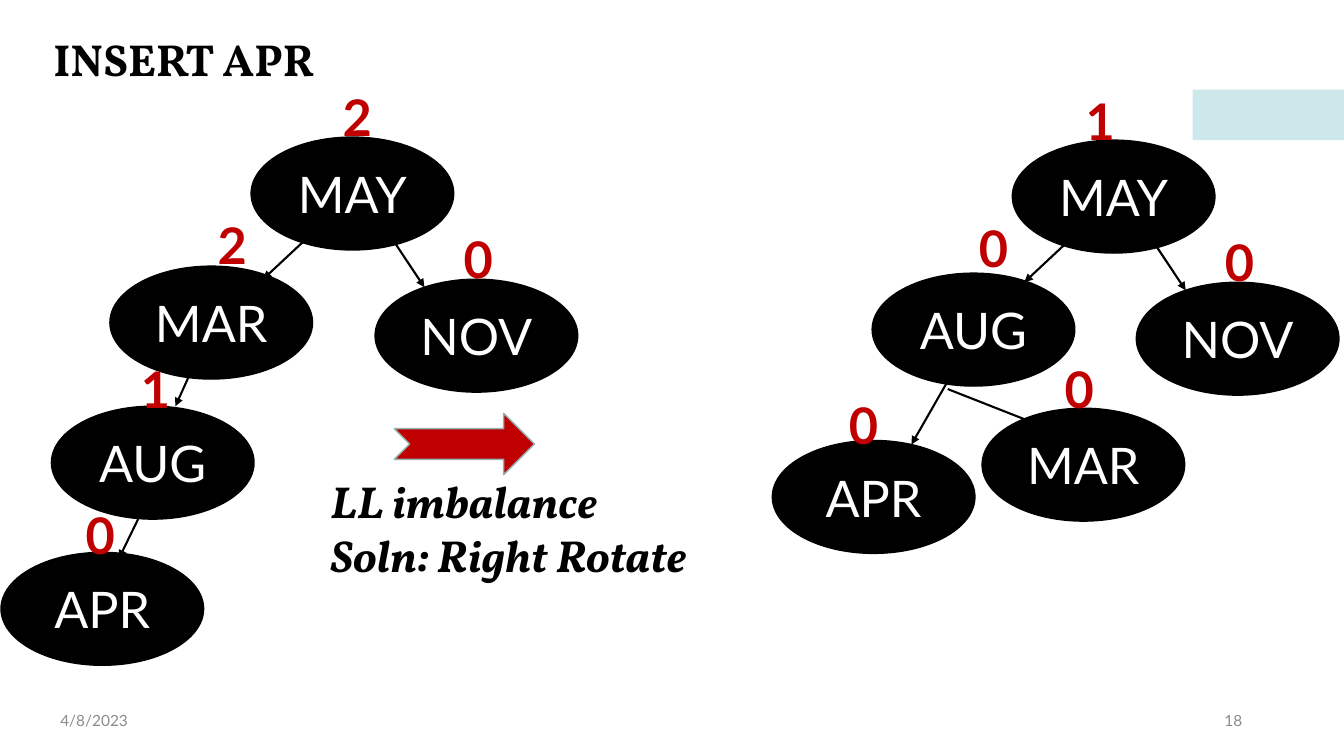
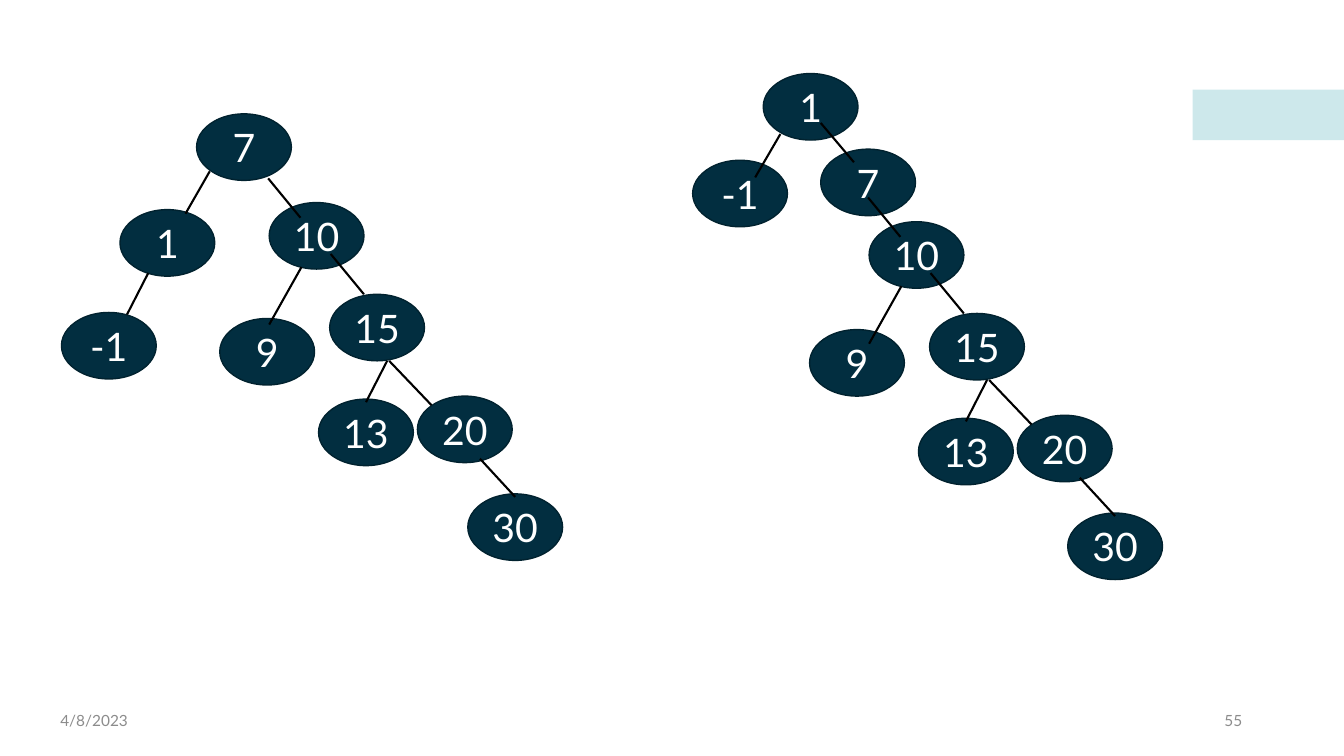
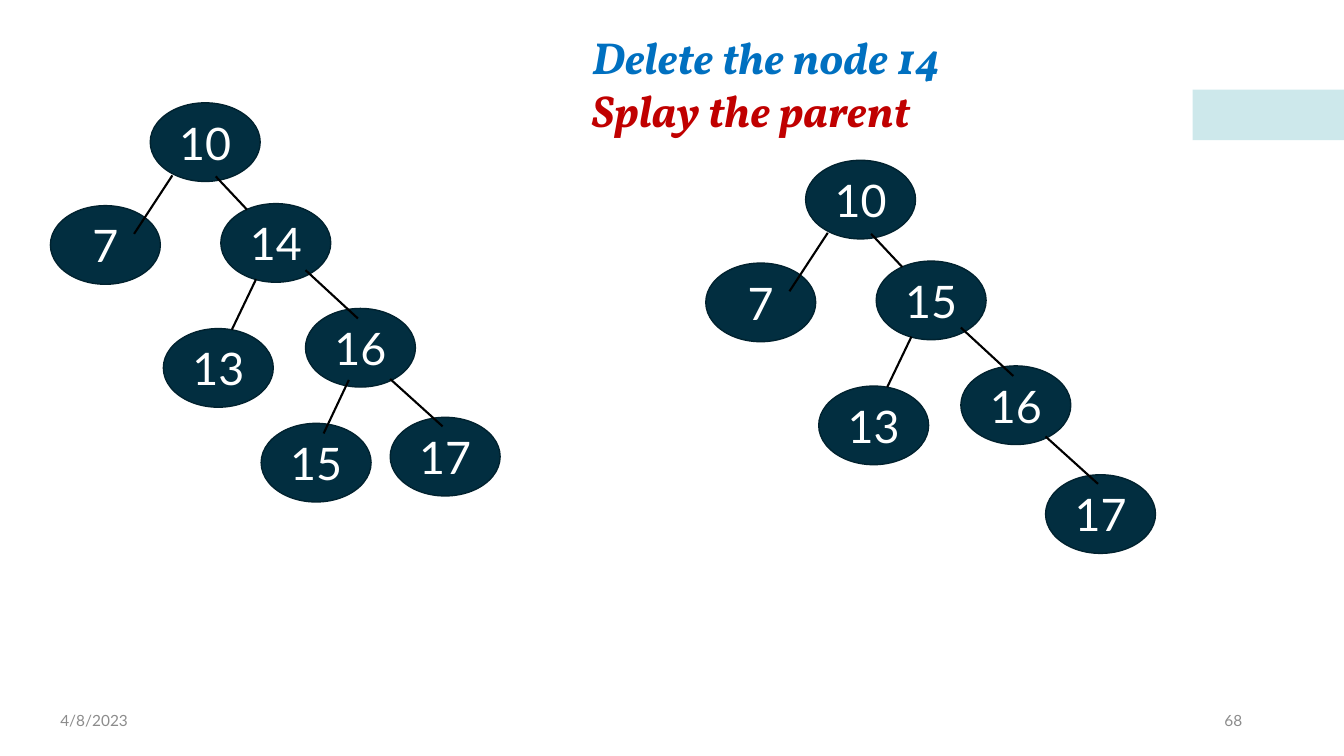
from lxml import etree
from pptx import Presentation
from pptx import util as u
from pptx.dml.color import RGBColor
from pptx.enum import shapes, text
from pptx.oxml.ns import qn

BLACK = RGBColor(0x00, 0x00, 0x00)
WHITE = RGBColor(0xFF, 0xFF, 0xFF)
GREY = RGBColor(0x8C, 0x8C, 0x8C)
RED = RGBColor(0xC0, 0x00, 0x00)
BLUE = RGBColor(0x00, 0x70, 0xC0)
NAVY = RGBColor(0x02, 0x2E, 0x40)
NAVY_EDGE = RGBColor(0x01, 0x22, 0x2F)
AQUA = RGBColor(0x9C, 0xD3, 0xD9)
ARROW_EDGE = RGBColor(0x91, 0xB0, 0xB3)

SANS, SERIF = "Lato", "Vollkorn"
COLUMNS, ROWS = 13.33, 7.5  # grid of one-inch cells
TITLE_ONLY, BLANK = 5, 6
LEFT, CENTER, RIGHT = text.PP_ALIGN.LEFT, text.PP_ALIGN.CENTER, text.PP_ALIGN.RIGHT
TOP, MIDDLE = text.MSO_ANCHOR.TOP, text.MSO_ANCHOR.MIDDLE


def grid(*cells):
    """Turn columns and rows into lengths."""
    return [u.Inches(cell) for cell in cells]


def shift_nodes(nodes, right, down):
    return [(label, left + right, top + down) for label, left, top in nodes]


def shift_edges(edges, right, down):
    return [(a + right, b + down, c + right, d + down) for a, b, c, d in edges]


class Deck:
    def __init__(self):
        self.presentation = Presentation()
        self.presentation.slide_width, self.presentation.slide_height = grid(COLUMNS, ROWS)
        self.slide = None

    def add_slide(self, number, layout=BLANK):
        first = self.slide is None
        self.slide = self.presentation.slides.add_slide(
            self.presentation.slide_layouts[layout])
        if first:
            self.add_master_band()
        for words, left, align in (("4/8/2023", 0.5, LEFT), (str(number), 9.42, RIGHT)):
            self.add_text([words], (left, 6.95, 3, 0.4), 11, [GREY], SANS,
                          align=align, anchor=MIDDLE)

    def add_master_band(self):
        band = self.add_figure(shapes.MSO_SHAPE.RECTANGLE, (11.83, 0.89, 1.5, 0.5), AQUA)
        color = band.element.spPr.find(qn("a:solidFill"))[0]
        etree.SubElement(color, qn("a:alpha")).set("val", "50000")
        self.presentation.slide_master.shapes.element.append(band.element)

    def add_figure(self, preset, box, fill, line=None):
        shape = self.slide.shapes.add_shape(preset, *grid(*box))
        shape.shadow.inherit = False
        shape.fill.solid()
        shape.fill.fore_color.rgb = fill
        if line is None:
            shape.line.fill.background()
        else:
            shape.line.color.rgb = line
            shape.line.width = u.Pt(1)
        return shape

    def set_text(self, shape, lines, size, colors, font, bold=False, italic=False,
                 align=LEFT, anchor=TOP, wrap=True):
        """Fill a shape with one paragraph a line; the last colour goes on."""
        frame = shape.text_frame
        frame.text = "\n".join(lines)
        frame.auto_size = text.MSO_AUTO_SIZE.NONE
        frame.word_wrap = wrap
        frame.vertical_anchor = anchor
        for index, paragraph in enumerate(frame.paragraphs):
            paragraph.alignment = align
            style = paragraph.runs[0].font
            style.name, style.size = font, u.Pt(size)
            style.bold, style.italic = bold, italic
            style.color.rgb = colors[min(index, len(colors) - 1)]

    def add_text(self, lines, box, size, colors, font, **options):
        shape = self.slide.shapes.add_textbox(*grid(*box))
        self.set_text(shape, lines, size, colors, font, **options)

    def add_title(self, lines, box, colors, **options):
        title = self.slide.shapes.title
        title.left, title.top, title.width, title.height = grid(*box)
        self.set_text(title, lines, 32, colors, SERIF, bold=True, **options)

    def add_edge(self, points, arrow=False):
        edge = self.slide.shapes.add_connector(shapes.MSO_CONNECTOR.STRAIGHT, *grid(*points))
        edge.line.color.rgb = BLACK
        edge.line.width = u.Pt(1.5)
        properties = edge.element.spPr
        if arrow:
            outline = properties.find(qn("a:ln"))
            etree.SubElement(outline, qn("a:tailEnd")).set("type", "triangle")
        etree.SubElement(properties, qn("a:effectLst"))

    def add_tree(self, nodes, edges, node_size, font_size,
                 fill=NAVY, line=NAVY_EDGE, arrow=False):
        for label, left, top in nodes:
            node = self.add_figure(shapes.MSO_SHAPE.OVAL, (left, top, *node_size), fill, line)
            self.set_text(node, [label], font_size, [WHITE], SANS,
                          align=CENTER, anchor=MIDDLE, wrap=False)
        for points in edges:
            self.add_edge(points, arrow)

    def add_balances(self, balances):
        for factor, left, top in balances:
            self.add_text([factor], (left, top, 0.44, 0.71), 36, [RED], SANS,
                          bold=True, wrap=False)


def build_insertion(deck):
    deck.add_slide(18, TITLE_ONLY)
    deck.add_title(["INSERT APR"], (0.43, 0.26, 3.61, 0.64), [BLACK])
    style = dict(node_size=(2.01, 1.12), font_size=36, fill=BLACK, line=BLACK, arrow=True)
    root_nodes = [("MAY", 2.49, 1.36), ("NOV", 3.72, 2.77)]
    root_edges = [(3.08, 2.33, 2.61, 2.77), (3.91, 2.4, 4.21, 2.85)]
    deck.add_tree(
        root_nodes + [("MAR", 1.09, 2.64), ("AUG", 0.51, 4.03), ("APR", 0.01, 5.48)],
        root_edges + [(1.92, 3.63, 1.74, 4.03), (1.37, 5.15, 1.18, 5.54)], **style)
    deck.add_balances([("2", 3.3, 0.81), ("0", 4.5, 2.21), ("2", 2.06, 2.07),
                       ("1", 1.3, 3.5), ("0", 0.75, 4.95)])
    deck.add_figure(shapes.MSO_SHAPE.NOTCHED_RIGHT_ARROW, (3.91, 4.1, 1.39, 0.61),
                    RED, ARROW_EDGE)
    deck.add_text(["LL imbalance", "Soln: Right Rotate"], (3.18, 4.65, 4.04, 1.18),
                  32, [BLACK], SERIF, bold=True, italic=True)
    deck.add_tree(
        shift_nodes(root_nodes, 7.55, 0.03)
        + [("AUG", 8.65, 2.71), ("MAR", 9.74, 4.05), ("APR", 7.66, 4.37)],
        shift_edges(root_edges, 7.55, 0.03)
        + [(9.47, 3.66, 9.04, 4.41), (9.4, 3.86, 10.29, 4.21)], **style)
    deck.add_balances([("1", 10.67, 0.84), ("0", 12.05, 2.24), ("0", 9.61, 2.1),
                       ("0", 10.46, 3.5), ("0", 8.32, 3.86)])


def build_rotation(deck):
    deck.add_slide(55)
    style = dict(node_size=(0.94, 0.66), font_size=28)
    branch_nodes = [("10", 2.67, 2.01), ("15", 3.27, 2.92), ("13", 3.16, 3.96),
                    ("20", 4.14, 3.93), ("30", 4.64, 4.9)]
    branch_edges = [(2.66, 1.77, 2.98, 2.16), (2.99, 2.65, 2.67, 3.22),
                    (3.28, 2.52, 3.61, 2.92), (3.84, 3.58, 3.63, 3.99),
                    (3.86, 3.58, 4.28, 4.02), (4.76, 4.55, 5.11, 4.93)]
    deck.add_tree(
        branch_nodes + [("7", 1.95, 1.13), ("1", 1.19, 2.08), ("-1", 0.61, 3.1),
                        ("9", 2.18, 3.16)],
        branch_edges + [(2.08, 1.7, 1.84, 2.12), (1.47, 2.71, 1.26, 3.12)], **style)
    deck.add_tree(
        shift_nodes(branch_nodes, 5.95, 0.19)
        + [("1", 7.57, 0.73), ("-1", 6.87, 1.59), ("7", 8.14, 1.48), ("9", 8.03, 3.27)],
        shift_edges(branch_edges, 5.95, 0.19)
        + [(7.74, 1.33, 7.49, 1.76), (8.14, 1.22, 8.47, 1.61)], **style)


def build_deletion(deck):
    deck.add_slide(68, TITLE_ONLY)
    deck.add_title(["Delete the node 14", "Splay the parent"], (5.77, 0.24, 4.14, 1.18),
                   [BLUE, RED], italic=True, align=text.PP_ALIGN.JUSTIFY)
    style = dict(node_size=(1.09, 0.78), font_size=32)
    kept_nodes = [("10", 1.49, 1.02), ("7", 0.5, 2.04), ("13", 1.62, 3.26),
                  ("16", 3.03, 3.06), ("17", 3.87, 4.14)]
    kept_edges = [(1.71, 1.74, 1.33, 2.32), (2.14, 1.75, 2.45, 2.08),
                  (2.54, 2.77, 2.3, 3.27), (3.03, 2.68, 3.55, 3.16),
                  (3.87, 3.76, 4.39, 4.23)]
    deck.add_tree(kept_nodes + [("14", 2.19, 2.02), ("15", 2.59, 4.2)],
                  kept_edges + [(3.46, 3.77, 3.21, 4.3)], **style)
    deck.add_tree(shift_nodes(kept_nodes + [("15", 2.19, 2.02)], 6.5, 0.57),
                  shift_edges(kept_edges, 6.5, 0.57), **style)


def main():
    deck = Deck()
    build_insertion(deck)
    build_rotation(deck)
    build_deletion(deck)
    deck.presentation.save("out.pptx")


if __name__ == "__main__":
    main()
